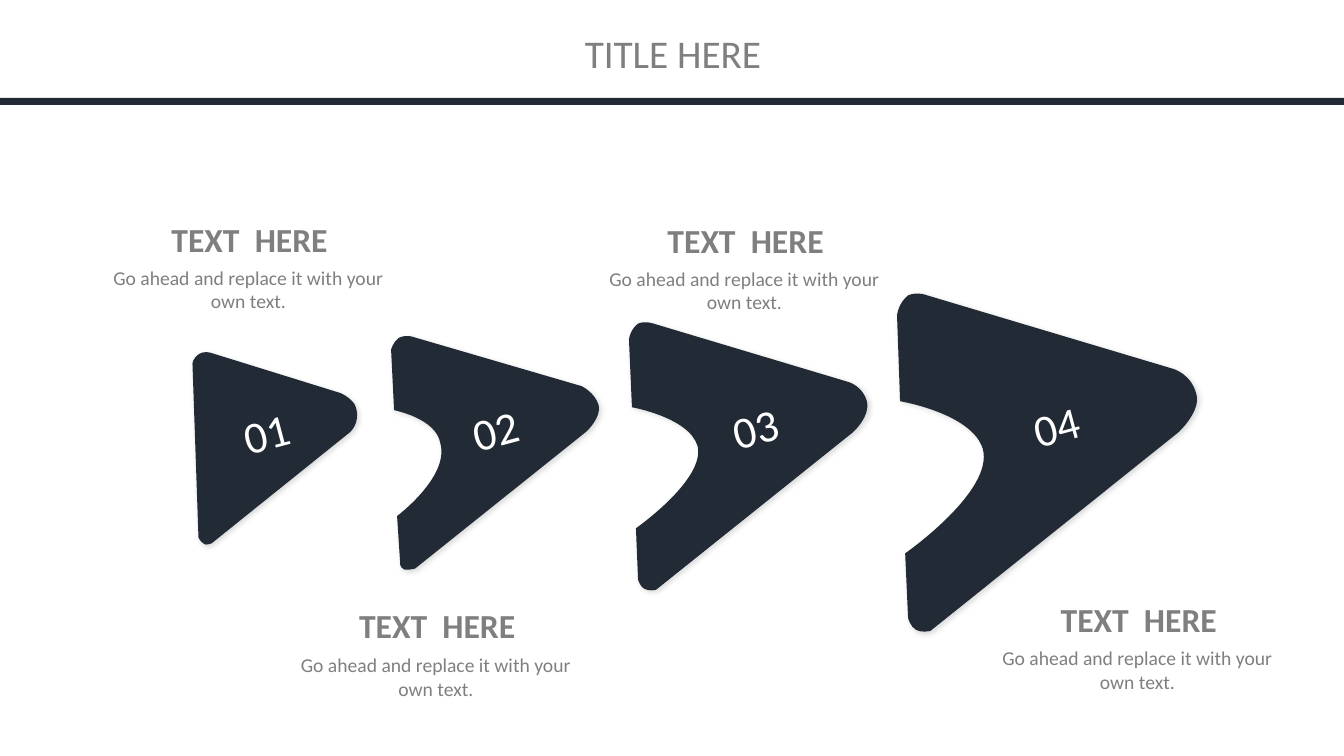
"""Build a slide with four growing arrowheads, each with a caption."""
import dataclasses
import math

import lxml.etree
import pptx
import pptx.dml.color
import pptx.enum.shapes
import pptx.enum.text
import pptx.oxml.ns
import pptx.shapes.autoshape
import pptx.slide
import pptx.text.text
import pptx.util

Pt = pptx.util.Pt
qn = pptx.oxml.ns.qn
Point = tuple[float, float]


@dataclasses.dataclass(frozen=True)
class Theme:
    font: str = "Calibri"
    navy: str = "222A35"
    gray: str = "7F7F7F"
    white: str = "FFFFFF"
    shadow: str = "000000"
    title_size: int = 28
    number_size: int = 32
    heading_size: int = 24
    body_size: int = 14


@dataclasses.dataclass(frozen=True)
class Corner:
    entry: Point
    entry_control: Point
    apex: Point
    exit_control: Point
    exit: Point


@dataclasses.dataclass(frozen=True)
class Arrowhead:
    number: str
    frame: tuple[float, float, float, float]
    left_inset: float
    corners: tuple[Corner, ...]


@dataclasses.dataclass(frozen=True)
class Caption:
    center: float
    heading_top: float
    body_top: float
    heading_width: float
    body_width: float


THEME = Theme()
TILT = 15
HEADING_SHIFT = 0.9
HEADING = "TEXT  HERE"
BODY = "Go ahead and replace it with your own text."
FIXED = pptx.enum.text.MSO_AUTO_SIZE.NONE
GROWING = pptx.enum.text.MSO_AUTO_SIZE.SHAPE_TO_FIT_TEXT

ARROWHEADS = (
    Arrowhead("03", (430.6, 214.6, 191.5, 187.9), 33.8, (
        Corner((606.2, 272.9), (616.3, 275.8), (619.2, 286.6), (622.1, 297.4), (609.1, 308.9)),
        Corner((468.7, 421.2), (463.7, 422.6), (460.1, 420.5), (457.2, 419), (455.8, 414)),
        Corner((454.3, 377.3), (504.7, 342), (498.2, 318.2), (491.8, 298.1), (451.4, 290.9)),
        Corner((449.3, 242.6), (450, 235.4), (455.8, 231.1), (460.8, 229), (466.6, 231.1)),
    )),
    Arrowhead("02", (262.8, 226.8, 167, 163.4), 22.3, (
        Corner((415.4, 275.8), (424.8, 280.1), (427.7, 289.4), (429.8, 298.1), (419, 308.2)),
        Corner((296.6, 406.1), (291.6, 407.5), (288.7, 406.8), (285.1, 405.4), (285.8, 401)),
        Corner((283.7, 368.6), (321.1, 340.6), (314.6, 316.8), (311.8, 298.8), (281.5, 293)),
        Corner((279.4, 249.8), (280.8, 244.1), (285.1, 241.2), (290.2, 239), (294.5, 240.5)),
    )),
    Arrowhead("01", (123.8, 241.2, 132.5, 134.6), 7.2, (
        Corner((243.4, 280.8), (252.7, 285.1), (254.2, 290.9), (257.8, 302.4), (249.8, 308.9)),
        Corner((151.2, 388.1), (147.6, 389.5), (146.2, 388.8), (142.6, 386.6), (141.8, 383.8)),
        Corner((137.5, 259.9), (137.5, 255.6), (142.6, 252.7), (145.4, 250.6), (150.5, 252)),
    )),
    Arrowhead("04", (617, 190.1, 240.5, 236.9), 42.5, (
        Corner((838.1, 263.5), (851, 267.1), (854.6, 281.5), (858.2, 293.8), (841.7, 308.9)),
        Corner((664.6, 450.7), (658.1, 452.2), (654.5, 450), (650.2, 447.8), (648.7, 441.4)),
        Corner((646.6, 395.3), (710.6, 350.6), (702, 320.4), (694.1, 295.2), (643, 286.6)),
        Corner((640.8, 225.4), (641.5, 216.7), (648.7, 211), (655.2, 208.1), (662.4, 211)),
    )),
)

CAPTIONS = (
    Caption(177.4, 153, 186.3, 182.2, 222.5),
    Caption(311.4, 428.8, 463, 193, 213.8),
    Caption(531.7, 153.4, 187, 182.2, 222.5),
    Caption(812.5, 424.1, 458, 193, 213.8),
)


def color(value: str) -> pptx.dml.color.RGBColor:
    return pptx.dml.color.RGBColor.from_string(value)


def apply_format(target: object, values: dict[str, object]) -> None:
    for name, value in values.items():
        setattr(target, name, value)


def write_text(frame: pptx.text.text.TextFrame, text: str, size: int, text_color: str,
               bold: bool = False, insets: tuple[float, ...] = (7.2, 3.6, 7.2, 3.6),
               anchor: object = pptx.enum.text.MSO_ANCHOR.TOP, fit: object = FIXED) -> None:
    sides = ("margin_left", "margin_top", "margin_right", "margin_bottom")
    apply_format(frame, {side: Pt(inset) for side, inset in zip(sides, insets)})
    apply_format(frame, {"word_wrap": True, "vertical_anchor": anchor, "text": text,
                         "auto_size": fit})
    paragraph = frame.paragraphs[0]
    paragraph.alignment = pptx.enum.text.PP_ALIGN.CENTER
    apply_format(paragraph.font, {"name": THEME.font, "size": Pt(size), "bold": bold})
    paragraph.font.color.rgb = color(text_color)


def paint(shape: pptx.shapes.autoshape.Shape) -> None:
    shape.shadow.inherit = False
    shape.fill.solid()
    shape.fill.fore_color.rgb = color(THEME.navy)
    shape.line.fill.background()


def add_soft_shadow(shape: pptx.shapes.autoshape.Shape) -> None:
    effects = shape._element.spPr.find(qn("a:effectLst"))
    shadow = lxml.etree.SubElement(
        effects, qn("a:outerShdw"), blurRad=str(Pt(4)), dist=str(Pt(2)),
        dir=str(45 * 60000), algn="tl", rotWithShape="0")
    tint = lxml.etree.SubElement(shadow, qn("a:srgbClr"), val=THEME.shadow)
    lxml.etree.SubElement(tint, qn("a:alpha"), val="15000")


def level_point(point: Point, frame: tuple[float, float, float, float]) -> Point:
    left, top, width, height = frame
    x, y = point[0] - left - width / 2, point[1] - top - height / 2
    cosine, sine = math.cos(math.radians(TILT)), math.sin(math.radians(TILT))
    return x * cosine - y * sine + width / 2, x * sine + y * cosine + height / 2


def add_segment(outline: lxml.etree._Element, tag: str, points: tuple[Point, ...],
                frame: tuple[float, float, float, float]) -> None:
    segment = lxml.etree.SubElement(outline, qn(tag))
    for point in points:
        x, y = level_point(point, frame)
        lxml.etree.SubElement(segment, qn("a:pt"), x=str(Pt(x)), y=str(Pt(y)))


def round_corners(shape: pptx.shapes.autoshape.Shape, arrowhead: Arrowhead) -> None:
    outline = next(shape._element.iter(qn("a:path")))
    for segment in list(outline):
        outline.remove(segment)
    outline.set("w", str(shape.width))
    outline.set("h", str(shape.height))
    for index, corner in enumerate(arrowhead.corners):
        add_segment(outline, "a:lnTo" if index else "a:moveTo", (corner.entry,), arrowhead.frame)
        for points in ((corner.entry, corner.entry_control, corner.apex),
                       (corner.exit_control, corner.exit, corner.exit)):
            add_segment(outline, "a:cubicBezTo", points, arrowhead.frame)
    lxml.etree.SubElement(outline, qn("a:close"))


def add_arrowhead(slide: pptx.slide.Slide, arrowhead: Arrowhead) -> None:
    apexes = [(Pt(corner.apex[0]), Pt(corner.apex[1])) for corner in arrowhead.corners]
    builder = slide.shapes.build_freeform(*apexes[0])
    builder.add_line_segments(apexes[1:], close=True)
    shape = builder.convert_to_shape()
    sides = ("left", "top", "width", "height")
    apply_format(shape, {side: Pt(value) for side, value in zip(sides, arrowhead.frame)})
    shape.rotation = 360 - TILT
    round_corners(shape, arrowhead)
    paint(shape)
    add_soft_shadow(shape)
    write_text(shape.text_frame, arrowhead.number, THEME.number_size, THEME.white,
               insets=(arrowhead.left_inset, 3.6, 7.2, 3.6),
               anchor=pptx.enum.text.MSO_ANCHOR.MIDDLE)


def add_caption(slide: pptx.slide.Slide, caption: Caption) -> None:
    rows = (
        (BODY, caption.center, caption.body_top, caption.body_width, 41,
         THEME.body_size, False, FIXED),
        (HEADING, caption.center + HEADING_SHIFT, caption.heading_top, caption.heading_width, 36,
         THEME.heading_size, True, GROWING),
    )
    for text, center, top, width, height, size, bold, fit in rows:
        box = slide.shapes.add_textbox(Pt(center - width / 2), Pt(top), Pt(width), Pt(height))
        write_text(box.text_frame, text, size, THEME.gray, bold, fit=fit)


def main() -> None:
    presentation = pptx.Presentation()
    apply_format(presentation, {"slide_width": Pt(960), "slide_height": Pt(540)})
    slide = presentation.slides.add_slide(presentation.slide_layouts[5])
    title = slide.shapes.title
    apply_format(title, {"left": Pt(349.2), "top": Pt(21), "width": Pt(263), "height": Pt(34)})
    write_text(title.text_frame, "TITLE HERE", THEME.title_size, THEME.gray,
               insets=(0, 0, 0, 0), fit=GROWING)
    paint(slide.shapes.add_shape(pptx.enum.shapes.MSO_SHAPE.RECTANGLE, 0, Pt(70), Pt(960), Pt(5)))
    for arrowhead in ARROWHEADS:
        add_arrowhead(slide, arrowhead)
    for caption in CAPTIONS:
        add_caption(slide, caption)
    presentation.save("out.pptx")


if __name__ == "__main__":
    main()
